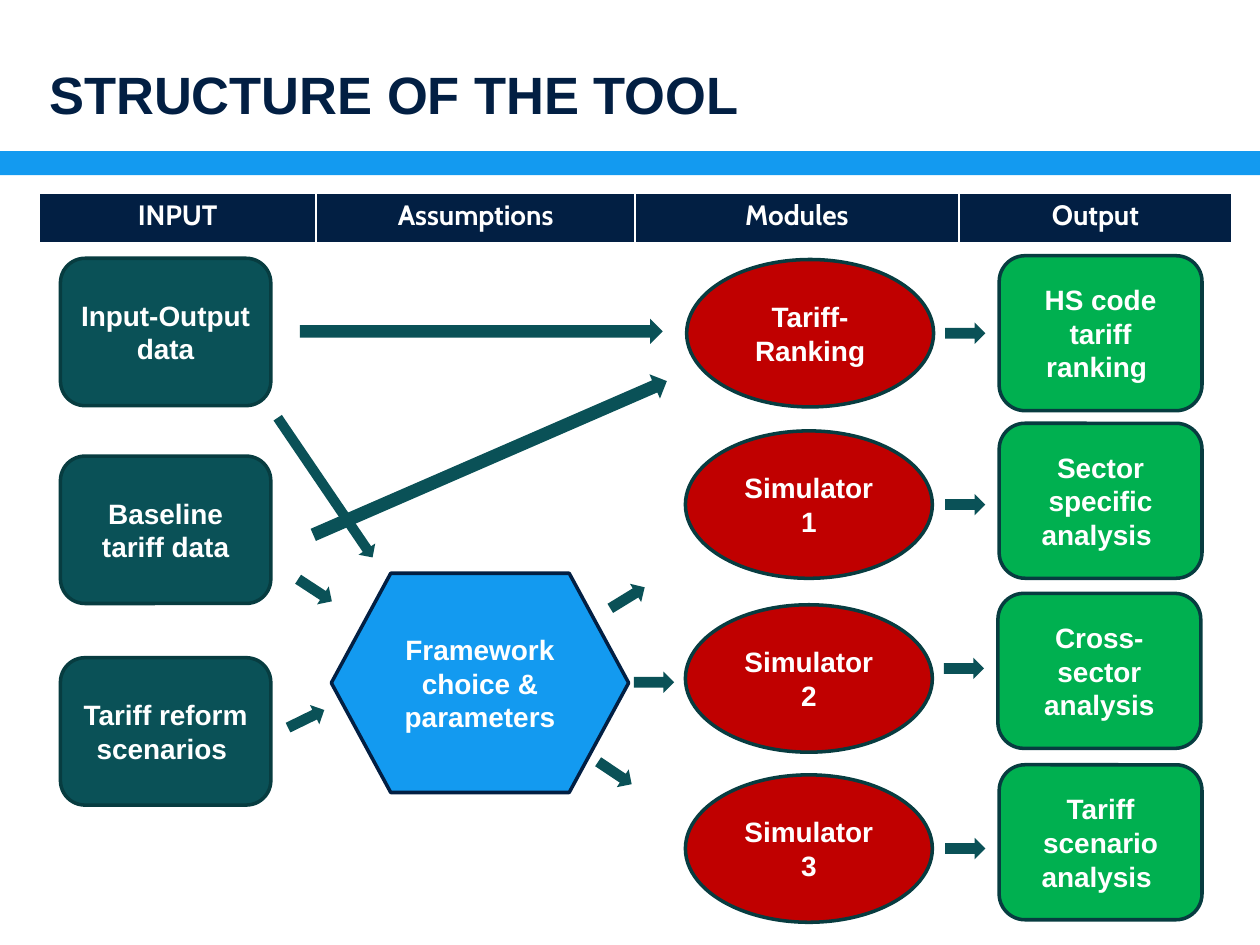
from lxml import etree
from pptx import Presentation
from pptx.dml.color import RGBColor
from pptx.enum.shapes import MSO_SHAPE
from pptx.enum.text import MSO_ANCHOR, PP_ALIGN
from pptx.oxml.ns import qn
from pptx.util import Inches, Pt

RECT, ROUND, OVAL = MSO_SHAPE.RECTANGLE, MSO_SHAPE.ROUNDED_RECTANGLE, MSO_SHAPE.OVAL
HEX, ARROW = MSO_SHAPE.FLOWCHART_PREPARATION, MSO_SHAPE.RIGHT_ARROW
MIDDLE, CENTER, LEFT = MSO_ANCHOR.MIDDLE, PP_ALIGN.CENTER, PP_ALIGN.LEFT
NAVY, BLUE, TEAL, EDGE = "021F43", "139AF0", "0A5157", "073C40"
RED, GREEN, WHITE = "C00000", "00B050", "FFFFFF"

HEADS = [("INPUT", 2.2), ("Assumptions", 2.53), ("Modules", 2.57), ("Output", 2.17)]
INPUTS = [("Input-Output data", 2.05), ("Baseline tariff data", 3.62),
          ("Tariff reform scenarios ", 5.22)]
MODULES = [("Tariff-Ranking", 5.45, 2.06), ("Simulator 1", 5.44, 3.42),
           ("Simulator 2", 5.44, 4.8), ("Simulator 3", 5.44, 6.15)]
OUTPUTS = [("HS code tariff ranking ", 7.93, 2.03),
           ("Sector specific analysis ", 7.93, 3.36),
           ("Cross-sector analysis", 7.92, 4.71),
           ("Tariff scenario analysis ", 7.93, 6.07)]
SHORT = [(7.5, 2.56, 0), (7.5, 3.92, 0), (7.49, 5.22, 0), (7.5, 6.65, 0),
         (4.82, 4.66, 328.5), (5.03, 5.33, 0), (4.72, 6.05, 33.8),
         (2.27, 5.62, 334), (2.34, 4.6, 33.2)]
LONG = [(2.38, 2.53, 2.88, 0.2, 0), (2.36, 3.53, 3.06, 0.21, 336.5),
        (1.91, 3.79, 1.34, 0.16, 55.8)]


def color(code):
    return RGBColor.from_string(code)


def write(frame, text, size=16, font="Arial", ink=WHITE, align=CENTER):
    frame.text = text
    para = frame.paragraphs[0]
    para.alignment = align
    face = para.runs[0].font
    face.name, face.size, face.bold = font, Pt(size), True
    face.color.rgb = color(ink)


def add_form(slide, kind, box, fill, line=None):
    form = slide.shapes.add_shape(kind, *map(Inches, box))
    form.shadow.inherit = False
    form.fill.solid()
    form.fill.fore_color.rgb = color(fill)
    if line:
        form.line.color.rgb = color(line)
        form.line.width = Pt(2)
    else:
        form.line.fill.background()
    return form


def add_node(slide, kind, box, text, fill, line=EDGE):
    frame = add_form(slide, kind, box, fill, line).text_frame
    frame.word_wrap = True
    frame.vertical_anchor = MIDDLE
    write(frame, text)
    return frame


def add_arrow(slide, box, turn):
    add_form(slide, ARROW, box, TEAL).rotation = turn


def add_title(slide, text):
    frame = slide.shapes.add_textbox(*map(Inches, (0.39, 0.33, 9.25, 0.83))).text_frame
    frame.word_wrap = True
    frame.vertical_anchor = MIDDLE
    frame.margin_left = frame.margin_right = frame.margin_top = frame.margin_bottom = 0
    write(frame, text, 30, ink=NAVY, align=LEFT)


def set_edges(cell):
    props = cell._tc.get_or_add_tcPr()
    for place, (side, width) in enumerate([("L", 1), ("R", 1), ("T", 1), ("B", 3)]):
        edge = etree.Element(qn(f"a:ln{side}"), w=str(Pt(width)))
        fill = etree.SubElement(edge, qn("a:solidFill"))
        etree.SubElement(fill, qn("a:srgbClr"), val=WHITE)
        props.insert(place, edge)


def add_heads(slide):
    box = map(Inches, (0.31, 1.53, 9.47, 0.41))
    table = slide.shapes.add_table(1, len(HEADS), *box).table
    for col, (text, width) in enumerate(HEADS):
        table.columns[col].width = Inches(width)
        cell = table.cell(0, col)
        cell.fill.solid()
        cell.fill.fore_color.rgb = color(NAVY)
        write(cell.text_frame, text, font="Cabin")
        set_edges(cell)


def main():
    deck = Presentation()
    deck.slide_width, deck.slide_height = Inches(10), Inches(7.5)
    slide = deck.slides.add_slide(deck.slide_layouts[6])
    add_form(slide, RECT, (0, 1.2, 10, 0.19), BLUE)
    add_title(slide, "STRUCTURE OF THE TOOL")
    add_heads(slide)
    for text, top in INPUTS:
        add_node(slide, ROUND, (0.48, top, 1.67, 1.17), text, TEAL)
    for text, left, top in MODULES:
        add_node(slide, OVAL, (left, top, 1.96, 1.17), text, RED)
    for text, left, top in OUTPUTS:
        add_node(slide, ROUND, (left, top, 1.61, 1.23), text, GREEN)
    frame = add_node(slide, HEX, (2.63, 4.55, 2.36, 1.74),
                     "Framework choice & parameters", BLUE, NAVY)
    frame.margin_left = frame.margin_right = 0
    for left, top, turn in SHORT:
        add_arrow(slide, (left, top, 0.32, 0.17), turn)
    for *box, turn in LONG:
        add_arrow(slide, box, turn)
    deck.save("out.pptx")


if __name__ == "__main__":
    main()
